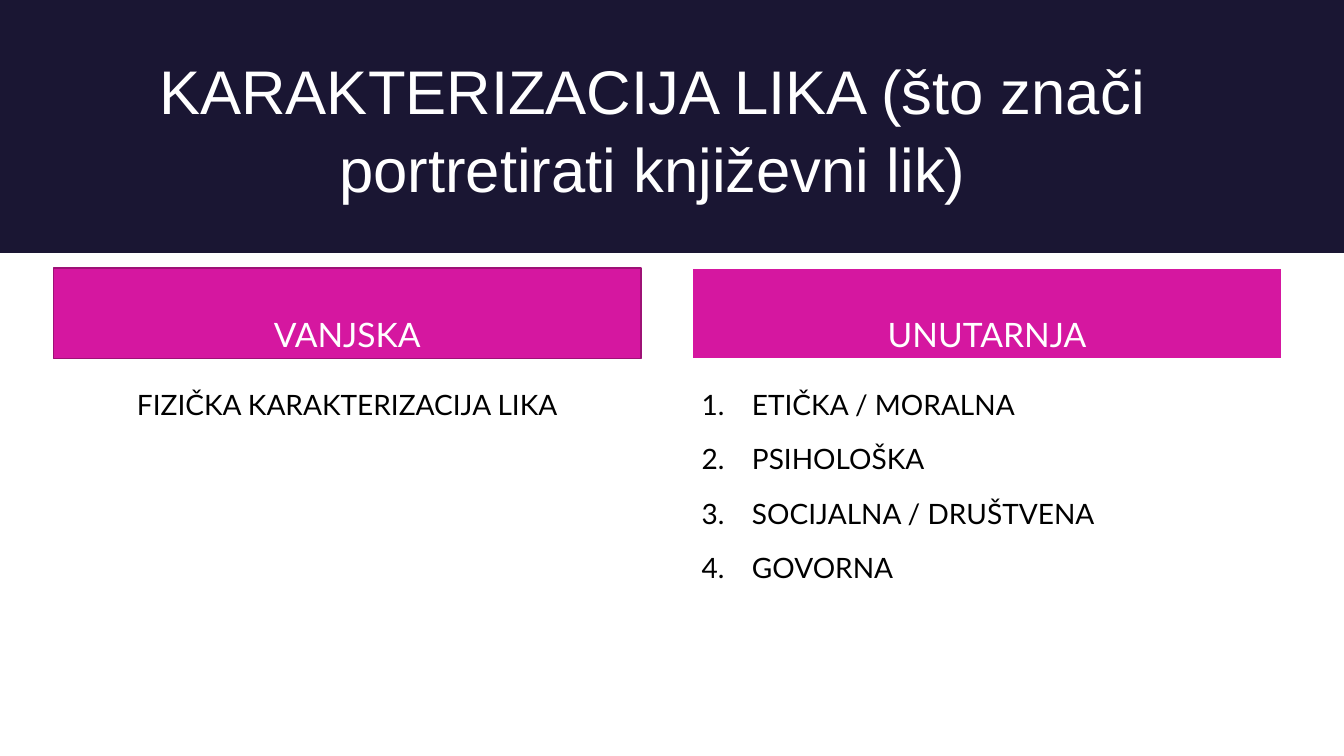
from lxml.etree import SubElement
from pptx import Presentation
from pptx.dml.color import RGBColor
from pptx.enum.shapes import MSO_SHAPE
from pptx.enum.text import MSO_ANCHOR, PP_ALIGN
from pptx.oxml.ns import qn
from pptx.util import Inches, Pt

COLORS = {
    "navy": "1A1633",
    "pink": "D517A0",
    "plum": "9E1176",
    "white": "FFFFFF",
    "black": "000000",
}
BODY_SPACING = {"line_spacing": 1.2, "space_before": Pt(10)}
CENTERED = {"alignment": PP_ALIGN.CENTER}
TITLE_FONT = {"name": "Arial", "size": Pt(44)}
HEADING_FONT = {"name": "Lato", "size": Pt(24)}
BODY_FONT = {"name": "Lato", "size": Pt(20)}
HEADING_TOP, HEADING_HEIGHT = 2.66, 0.9
BODY_TOP = 3.73


def color(name):
    return RGBColor.from_string(COLORS[name])


def set_attributes(target, values):
    for name, value in values.items():
        setattr(target, name, value)


def add_box(slide, box, fill, line=None, width=1):
    shape = slide.shapes.add_shape(MSO_SHAPE.RECTANGLE, *map(Inches, box))
    shape.shadow.inherit = False
    shape.fill.solid()
    shape.fill.fore_color.rgb = color(fill)
    if line:
        shape.line.color.rgb = color(line)
        shape.line.width = Pt(width)
    else:
        shape.line.fill.background()
    return shape


def write_text(shape, lines, font, font_color, paragraph_format, anchor=MSO_ANCHOR.TOP):
    frame = shape.text_frame
    set_attributes(frame, {"word_wrap": True, "vertical_anchor": anchor})
    frame.text = "\n".join(lines)
    for paragraph in frame.paragraphs:
        set_attributes(paragraph, paragraph_format)
        set_attributes(paragraph.font, font)
        for run in paragraph.runs:
            set_attributes(run.font, font)
            run.font.color.rgb = color(font_color)


def add_text(slide, box, *text_arguments):
    shape = slide.shapes.add_textbox(*map(Inches, box))
    write_text(shape, *text_arguments)
    return shape


def number_paragraphs(shape):
    for paragraph in shape.text_frame.paragraphs:
        properties = paragraph._p.get_or_add_pPr()
        properties.set("marL", str(Inches(0.5)))
        properties.set("indent", str(Inches(-0.5)))
        SubElement(properties, qn("a:buFont"), typeface="+mj-lt")
        SubElement(properties, qn("a:buAutoNum"), type="arabicPeriod")


def add_column(slide, left, width, heading, lines, body_height, body_format, line, line_width):
    heading_box = (left, HEADING_TOP, width, HEADING_HEIGHT)
    shape = add_box(slide, heading_box, "pink", line, line_width)
    write_text(shape, [heading], HEADING_FONT, "white", BODY_SPACING | CENTERED, MSO_ANCHOR.BOTTOM)
    body_box = (left, BODY_TOP, width, body_height)
    return add_text(slide, body_box, lines, BODY_FONT, "black", BODY_SPACING | body_format)


def main():
    presentation = Presentation()
    presentation.slide_width = Inches(13.33)
    presentation.slide_height = Inches(7.5)
    slide = presentation.slides.add_slide(presentation.slide_layouts[6])

    add_box(slide, (0, 0, 13.33, 2.51), "navy")
    title = "KARAKTERIZACIJA LIKA (što znači portretirati književni lik)"
    add_text(slide, (0.53, 0.4, 11.89, 1.68), [title], TITLE_FONT, "white",
             CENTERED | {"line_spacing": 1.05}, MSO_ANCHOR.BOTTOM)

    add_column(slide, 0.53, 5.83, "VANJSKA", ["FIZIČKA KARAKTERIZACIJA LIKA"],
               3.04, CENTERED, "plum", 1)
    inner_traits = ["ETIČKA / MORALNA", "PSIHOLOŠKA", "SOCIJALNA / DRUŠTVENA", "GOVORNA"]
    inner_body = add_column(slide, 6.86, 5.86, "UNUTARNJA", inner_traits,
                            3.28, {"alignment": PP_ALIGN.LEFT}, "white", 1.5)
    number_paragraphs(inner_body)

    presentation.save("out.pptx")


if __name__ == "__main__":
    main()
